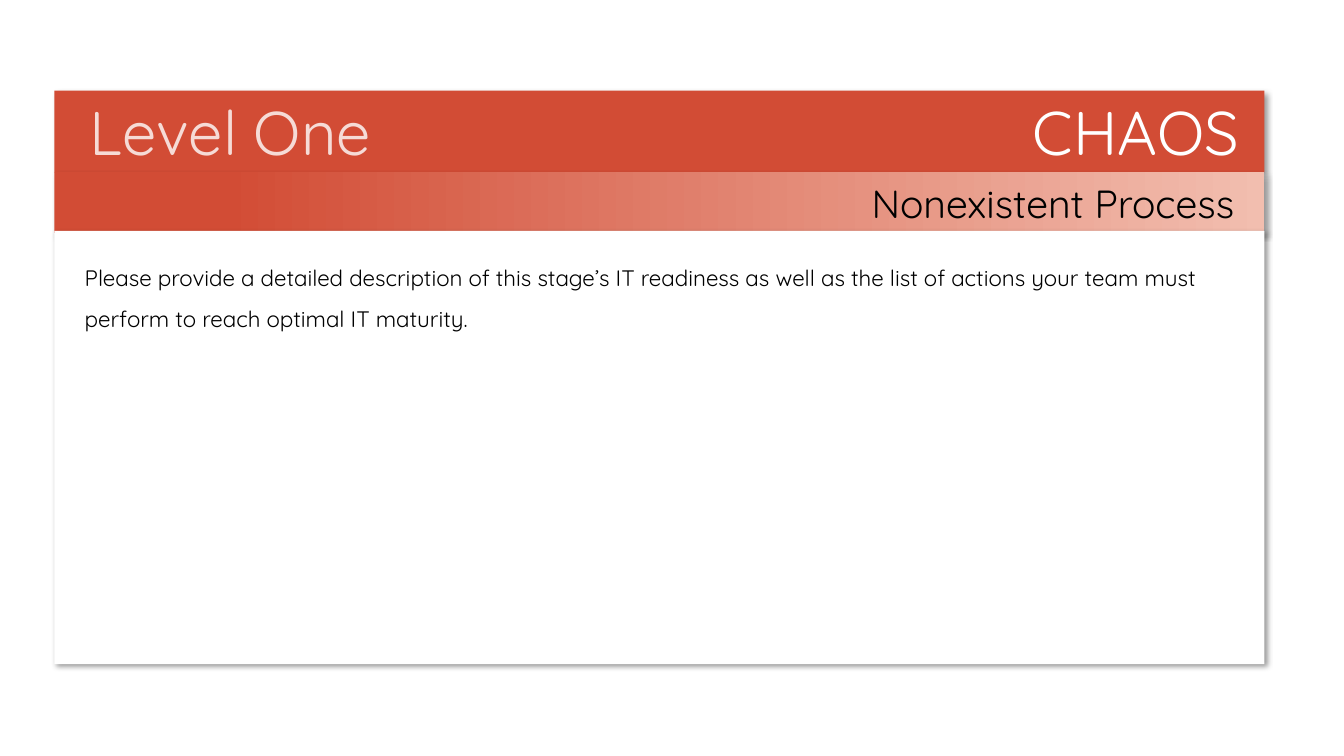
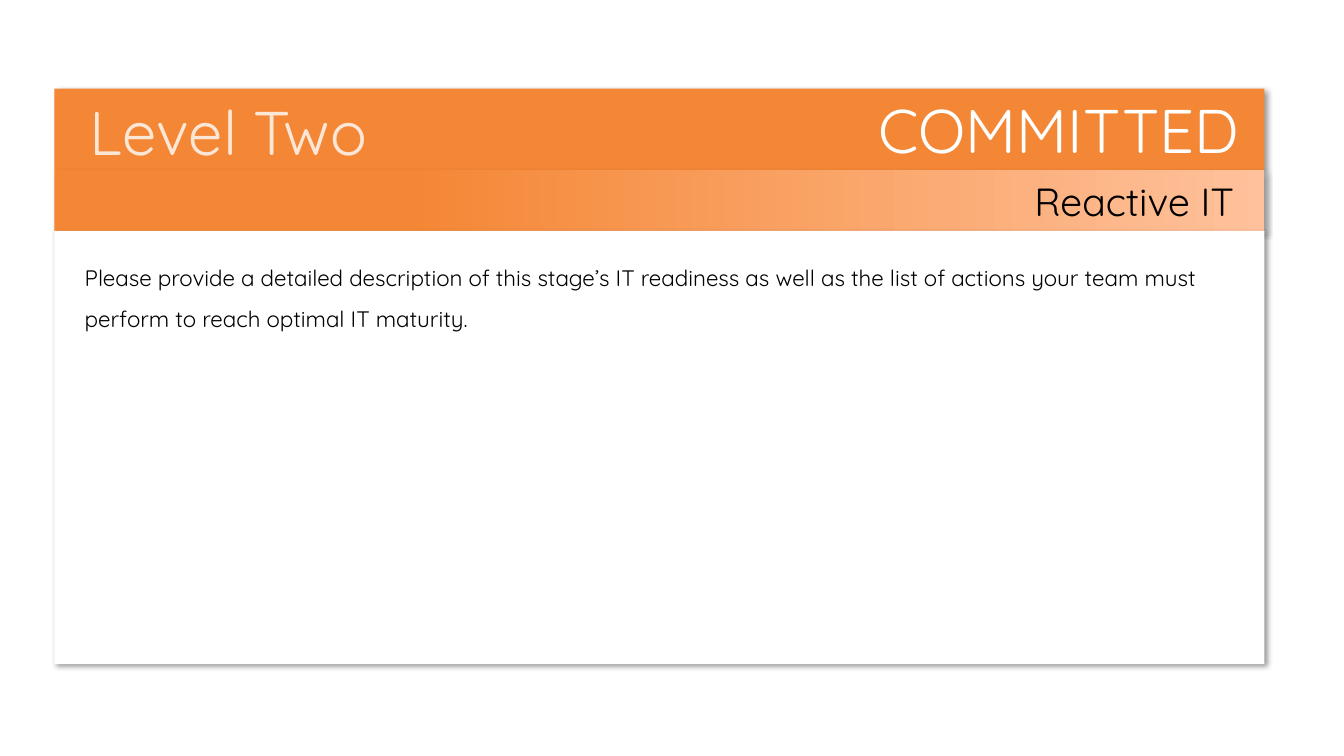
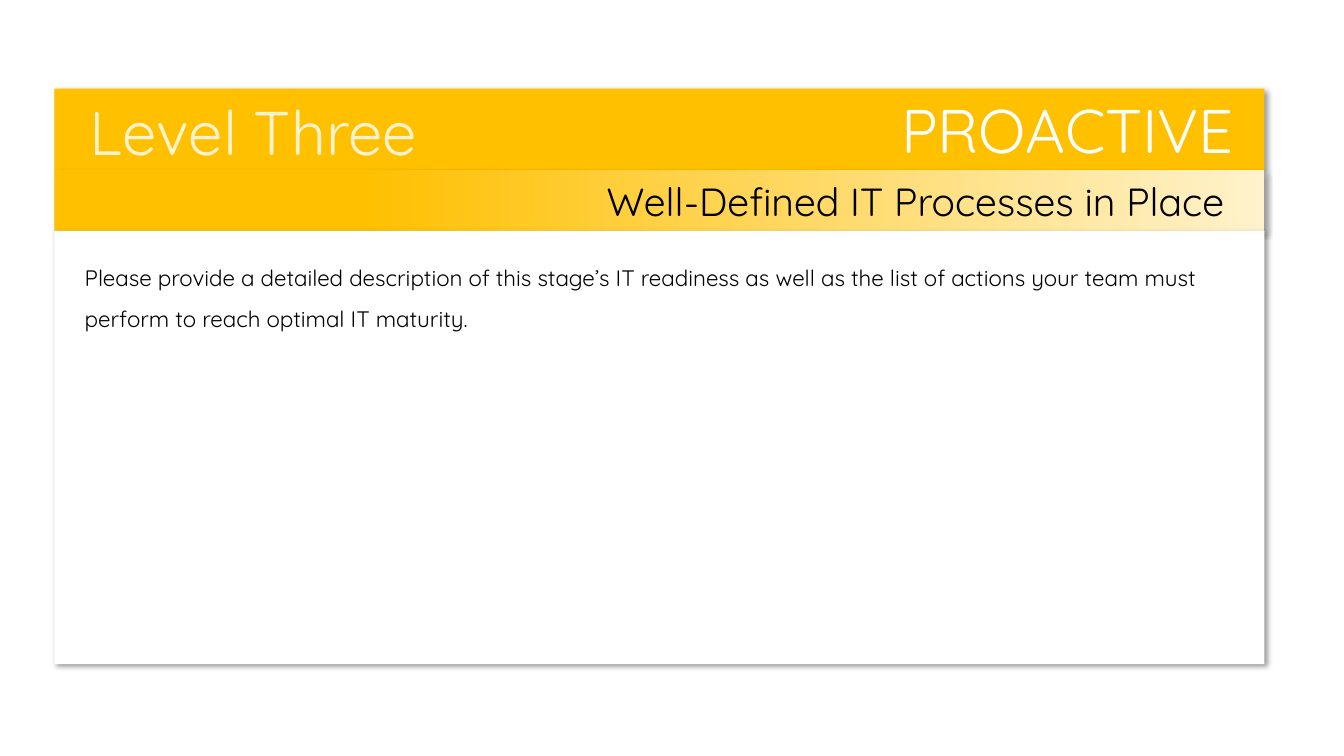
from dataclasses import dataclass

from lxml import etree
from pptx import Presentation
from pptx.dml import color
from pptx.enum import shapes, text
from pptx.oxml import ns
from pptx.util import Inches, Pt

FONT = "Quicksand"
WHITE, BLACK = "FFFFFF", "000000"
LEFT, WIDTH = 0.54, 12
HEADER_H, BAND_H = 0.81, 0.6
BODY_TOP, BODY_H = 2.29, 4.3
BODY_TEXT = (
    "Please provide a detailed description of this stage’s IT readiness as well as "
    "the list of actions your team must perform to reach optimal IT maturity."
)


@dataclass
class Level:
    title: str
    stage: str
    summary: str
    main: str
    pale: str
    fade_start: float
    top: float = 0.88
    stage_inset: float = 0.25
    summary_inset: float = 0.3


LEVELS = [
    Level("Level One", "CHAOS", "Nonexistent Process", "D24C35", "F2BEAF", 0.14, top=0.9),
    Level("Level Two", "COMMITTED", "Reactive IT", "F48735", "FFC19B", 0.29),
    Level("Level Three", "PROACTIVE", "Well-Defined IT Processes in Place",
          "FFC000", "FFF2CC", 0.25, stage_inset=0.3, summary_inset=0.4),
]


def rgb(value: str) -> color.RGBColor:
    return color.RGBColor.from_string(value)


def place(sp, left: float, top: float, width: float, height: float) -> None:
    sp.left, sp.top = Inches(left), Inches(top)
    sp.width, sp.height = Inches(width), Inches(height)


def solid(sp, value: str) -> None:
    sp.fill.solid()
    sp.fill.fore_color.rgb = rgb(value)


def add_shadow(sp) -> None:
    sp.line.fill.background()
    sp.shadow.inherit = False
    effects = sp.element.spPr.find(ns.qn("a:effectLst"))
    outer = etree.SubElement(
        effects, ns.qn("a:outerShdw"), blurRad=str(Pt(4)), dist=str(Pt(3)),
        dir="2700000", algn="tl", rotWithShape="0")
    shade = etree.SubElement(outer, ns.qn("a:srgbClr"), val=BLACK)
    etree.SubElement(shade, ns.qn("a:alpha"), val="40000")


def write(sp, content: str, size: float, value: str, align=text.PP_ALIGN.LEFT,
          anchor=text.MSO_ANCHOR.TOP, inset_x: tuple[float, float] = (0.1, 0.1),
          inset_y: float = 0.05):
    tf = sp.text_frame
    tf.word_wrap = True
    tf.auto_size = text.MSO_AUTO_SIZE.NONE
    tf.vertical_anchor = anchor
    tf.margin_left, tf.margin_right = map(Inches, inset_x)
    tf.margin_top = tf.margin_bottom = Inches(inset_y)
    p = tf.paragraphs[0]
    p.text = content
    p.alignment = align
    p.space_before = Pt(0)
    p.font.name, p.font.size = FONT, Pt(size)
    p.font.color.rgb = rgb(value)
    return p


def add_band(s, top: float, height: float):
    sp = s.shapes.add_shape(shapes.MSO_SHAPE.RECTANGLE, Inches(LEFT), Inches(top),
                            Inches(WIDTH), Inches(height))
    add_shadow(sp)
    return sp


def bring_to_front(sp) -> None:
    sp.element.getparent().append(sp.element)


def add_header(s, level: Level) -> None:
    header = add_band(s, level.top, HEADER_H)
    solid(header, level.main)
    write(header, level.stage, 44, WHITE, text.PP_ALIGN.RIGHT, text.MSO_ANCHOR.BOTTOM,
          (0.1, level.stage_inset))

    band = add_band(s, level.top + HEADER_H, BAND_H)
    band.fill.gradient()
    band.fill.gradient_angle = 0
    stops = ((level.fade_start, level.main), (1, level.pale))
    for stop, (position, value) in zip(band.fill.gradient_stops, stops):
        stop.position = position
        stop.color.rgb = rgb(value)
    write(band, level.summary, 28, BLACK, text.PP_ALIGN.RIGHT, text.MSO_ANCHOR.MIDDLE,
          (0.1, level.summary_inset))


def format_body(sp) -> None:
    place(sp, LEFT, BODY_TOP, WIDTH, BODY_H)
    solid(sp, WHITE)
    add_shadow(sp)
    p = write(sp, BODY_TEXT, 16, BLACK, inset_x=(0.3, 0.3), inset_y=0.2)
    p.line_spacing = 1.5
    props = sp.element.find(".//" + ns.qn("a:pPr"))
    props.set("marL", "0")
    props.set("indent", "0")
    props.find(ns.qn("a:defRPr")).addprevious(etree.Element(ns.qn("a:buNone")))
    bring_to_front(sp)


def format_title(sp, title: str) -> None:
    place(sp, 0.79, 0.88, 4.79, 0.84)
    write(sp, title, 44, WHITE)
    sp.text_frame.auto_size = text.MSO_AUTO_SIZE.SHAPE_TO_FIT_TEXT
    for tint in sp.element.iter(ns.qn("a:srgbClr")):
        etree.SubElement(tint, ns.qn("a:alpha"), val="80000")
    bring_to_front(sp)


def main() -> None:
    prs = Presentation()
    prs.slide_width, prs.slide_height = Inches(13.33), Inches(7.5)
    for level in LEVELS:
        s = prs.slides.add_slide(prs.slide_layouts[1])
        add_header(s, level)
        format_body(s.placeholders[1])
        format_title(s.shapes.title, level.title)
    prs.save("out.pptx")


if __name__ == "__main__":
    main()
